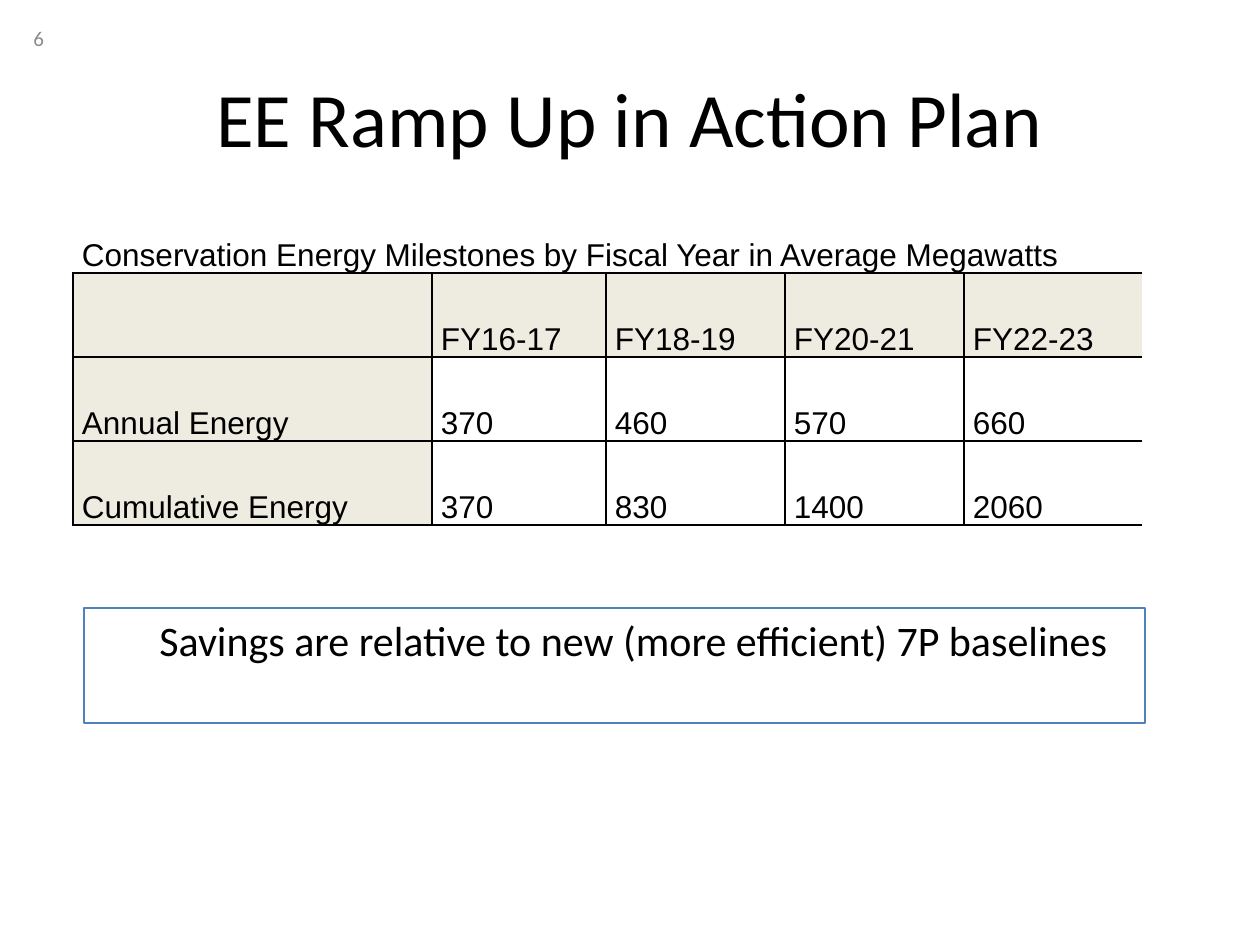
from lxml.etree import SubElement
from pptx import Presentation
from pptx.dml.color import RGBColor
from pptx.enum.shapes import MSO_SHAPE as Shape
from pptx.enum.text import MSO_ANCHOR as Anchor, PP_ALIGN as Align
from pptx.oxml.ns import qn
from pptx.util import Emu, Pt

PX_PER_INCH = 126
BLACK = "000000"
BEIGE = "EEECE1"
CAPTION = "Conservation Energy Milestones by Fiscal Year in Average Megawatts"
ROWS = [
    ["", "FY16-17", "FY18-19", "FY20-21", "FY22-23"],
    ["Annual Energy", "370", "460", "570", "660"],
    ["Cumulative Energy", "370", "830", "1400", "2060"],
]
COLUMN_WIDTHS = [359, 174, 179, 179, 179, 33]
ROW_HEIGHT = 84


def px(length):
    return Emu(round(length * 914400 / PX_PER_INCH))


def color(code):
    return RGBColor.from_string(code)


def write(frame, text, size=18, font="Calibri", ink=BLACK, align=Align.LEFT,
          anchor=Anchor.TOP, spacing=None, indent=0):
    frame.word_wrap = True
    frame.vertical_anchor = anchor
    para = frame.paragraphs[0]
    para.alignment = align
    if spacing:
        para.line_spacing = Pt(spacing)
    if indent:
        para.level = 1
        properties = para._p.get_or_add_pPr()
        properties.set("marL", str(px(indent)))
        properties.set("indent", "0")
    span = para.add_run()
    span.text = text
    span.font.size = Pt(size)
    span.font.name = font
    span.font.color.rgb = color(ink)


def add_title(page, text):
    title = page.shapes.title
    title.left, title.top, title.width, title.height = map(px, (63, 38, 1134, 157))
    write(title.text_frame, text, size=44, align=Align.CENTER, anchor=Anchor.MIDDLE)


def add_page_number(page, text):
    box = page.shapes.add_textbox(px(21), px(13), px(294), px(50))
    write(box.text_frame, text, size=12, ink="8C8C8C", anchor=Anchor.MIDDLE)


def write_cell(cell, text):
    cell.margin_left = cell.margin_right = px(9)
    cell.margin_top = cell.margin_bottom = 0
    cell.vertical_anchor = Anchor.BOTTOM
    if text:
        write(cell.text_frame, text, font="Arial", anchor=None, spacing=14)


def outline_cell(cell):
    properties = cell._tc.get_or_add_tcPr()
    for side in ("lnL", "lnR", "lnT", "lnB"):
        line = SubElement(properties, qn(f"a:{side}"), w=str(Pt(1)))
        fill = SubElement(line, qn("a:solidFill"))
        SubElement(fill, qn("a:srgbClr"), val=BLACK)


def add_milestones(page):
    row_count, column_count = len(ROWS) + 1, len(COLUMN_WIDTHS)
    table = page.shapes.add_table(row_count, column_count, px(73), px(189),
                                  px(sum(COLUMN_WIDTHS)),
                                  px(row_count * ROW_HEIGHT)).table
    table.first_row = table.horz_banding = False
    for column, width in zip(table.columns, COLUMN_WIDTHS):
        column.width = px(width)
    for row in table.rows:
        row.height = px(ROW_HEIGHT)

    # Body cells: header row and label column are shaded
    for r, texts in enumerate(ROWS, start=1):
        for c, text in enumerate(texts):
            cell = table.cell(r, c)
            write_cell(cell, text)
            outline_cell(cell)
            if r == 1 or c == 0:
                cell.fill.solid()
                cell.fill.fore_color.rgb = color(BEIGE)
            else:
                cell.fill.background()

    # Caption row and narrow last column stay clear
    for r in range(row_count):
        table.cell(r, column_count - 1).fill.background()
    caption = table.cell(0, 0)
    caption.merge(table.cell(0, column_count - 1))
    caption.fill.background()
    write_cell(caption, CAPTION)


def add_note(page, text):
    note = page.shapes.add_shape(Shape.RECTANGLE, px(84), px(608), px(1061), px(115))
    note.shadow.inherit = False
    note.fill.background()
    note.line.color.rgb = color("4F81BD")
    note.line.width = Pt(0.75)
    write(note.text_frame, text, size=24, indent=63)


def main():
    deck = Presentation()
    deck.slide_width, deck.slide_height = px(1260), px(945)
    page = deck.slides.add_slide(deck.slide_layouts[5])
    add_title(page, "EE Ramp Up in Action Plan")
    add_page_number(page, "6")
    add_milestones(page)
    add_note(page, "Savings are relative to new (more efficient) 7P baselines")
    deck.save("out.pptx")


if __name__ == "__main__":
    main()
